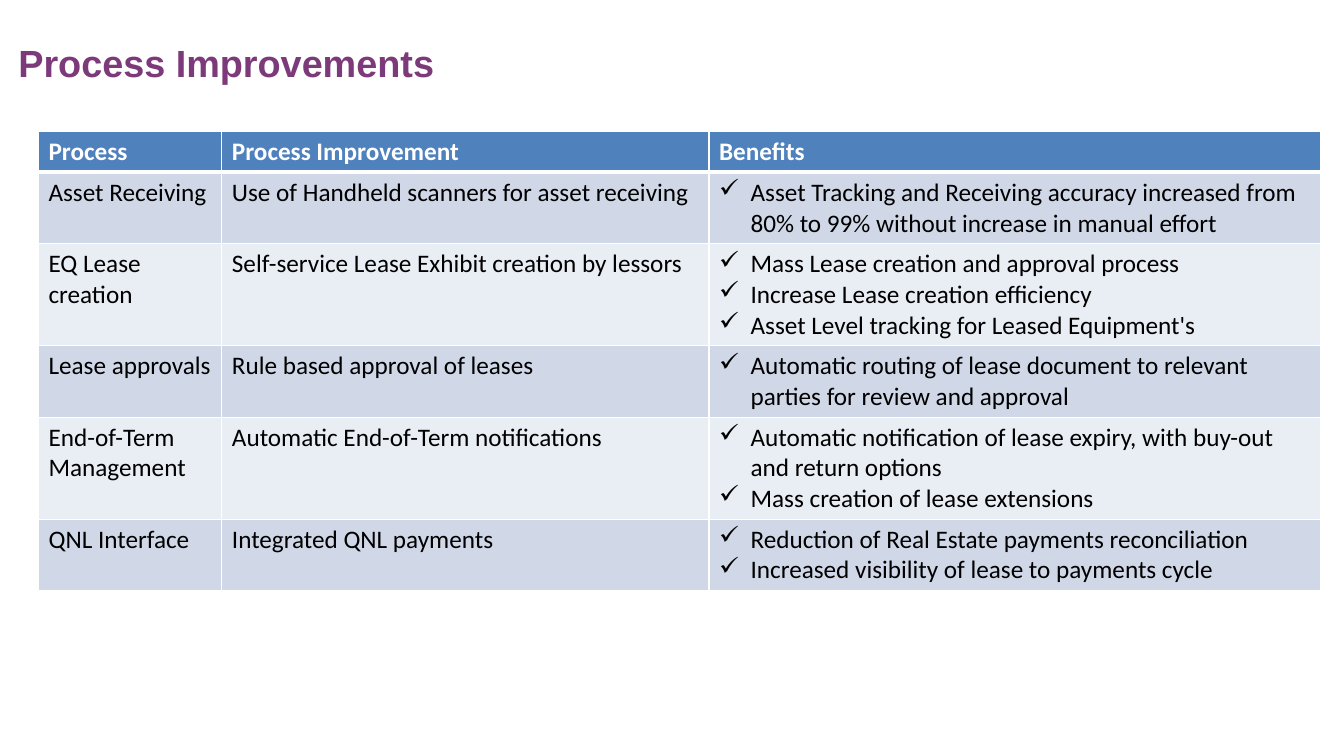
import pptx
import pptx.dml.color
import pptx.enum.text
import pptx.oxml
import pptx.oxml.ns
import pptx.util
from lxml import etree

Pt = pptx.util.Pt

COLORS = {
    "title": "7C3A7A",
    "header": "4F81BD",
    "odd": "D0D8E8",
    "even": "E9EDF4",
    "white": "FFFFFF",
    "black": "000000",
}

HEADINGS = ["Process", "Process Improvement", "Benefits"]
IMPROVEMENTS = [
    ("Asset Receiving", "Use of Handheld scanners for asset receiving",
     ["Asset Tracking and Receiving accuracy increased from 80% to 99% "
      "without increase in manual effort"]),
    ("EQ Lease creation", "Self-service Lease Exhibit creation by lessors",
     ["Mass Lease creation and approval process",
      "Increase Lease creation efficiency",
      "Asset Level tracking for Leased Equipment's"]),
    ("Lease approvals", "Rule based approval of leases",
     ["Automatic routing of lease document to relevant parties for review "
      "and approval"]),
    ("End-of-Term Management", "Automatic End-of-Term notifications",
     ["Automatic notification of lease expiry, with buy-out and return options",
      "Mass creation of lease extensions"]),
    ("QNL Interface", "Integrated QNL payments",
     ["Reduction of Real Estate payments reconciliation",
      "Increased visibility of lease to payments cycle"]),
]
ROW_LINES = [1, 2, 3, 2, 3, 2]
COLUMN_WIDTHS = [131, 348, 437]
LINE_HEIGHT = 21.9
CELL_PADDING = 7.2


class SlideBuilder:
    """Draws styled elements on the current slide."""

    def __init__(self, slide):
        self.slide = slide

    def color(self, name):
        return pptx.dml.color.RGBColor.from_string(COLORS[name])

    def style(self, paragraph, face, size, color, bold):
        font = paragraph.font
        font.name, font.size, font.bold = face, Pt(size), bold
        font.color.rgb = self.color(color)

    def title(self, wording, left, top, width, height):
        frame = self.slide.shapes.add_textbox(
            Pt(left), Pt(top), Pt(width), Pt(height)).text_frame
        frame.word_wrap = True
        frame.vertical_anchor = pptx.enum.text.MSO_ANCHOR.BOTTOM
        frame.text = wording
        self.style(frame.paragraphs[0], "Arial", 27, "title", True)

    def check_mark(self, paragraph):
        properties = paragraph._p.get_or_add_pPr()
        properties.set("marL", str(Pt(22.5)))
        properties.set("indent", str(-Pt(22.5)))
        bullet = etree.SubElement(properties, pptx.oxml.ns.qn("a:buChar"))
        bullet.set("char", "✓")

    def borders(self, cell, top, bottom):
        sides = {"L": 1, "R": 1, "T": top, "B": bottom}
        for position, (side, width) in enumerate(sides.items()):
            border = pptx.oxml.parse_xml(
                f'<a:ln{side} {pptx.oxml.ns.nsdecls("a")} w="{Pt(width)}">'
                f'<a:solidFill><a:srgbClr val="{COLORS["white"]}"/></a:solidFill>'
                f'</a:ln{side}>')
            cell._tc.get_or_add_tcPr().insert(position, border)

    def cell(self, cell, content, row):
        header = row == 0
        checked = isinstance(content, list)
        cell.fill.solid()
        cell.fill.fore_color.rgb = self.color(
            "header" if header else "odd" if row % 2 else "even")
        self.borders(cell, 3 if row == 1 else 1, 3 if header else 1)
        cell.text = "\n".join(content) if checked else content
        for paragraph in cell.text_frame.paragraphs:
            if checked:
                self.check_mark(paragraph)
            self.style(paragraph, "Calibri", 18,
                       "white" if header else "black", header)

    def table(self, rows, left, top):
        heights = [CELL_PADDING + LINE_HEIGHT * lines for lines in ROW_LINES]
        table = self.slide.shapes.add_table(
            len(rows), len(COLUMN_WIDTHS), Pt(left), Pt(top),
            Pt(sum(COLUMN_WIDTHS)), Pt(sum(heights))).table
        for column, width in zip(table.columns, COLUMN_WIDTHS):
            column.width = Pt(width)
        for row, (contents, height) in enumerate(zip(rows, heights)):
            table.rows[row].height = Pt(height)
            for column, content in enumerate(contents):
                self.cell(table.cell(row, column), content, row)


def main():
    presentation = pptx.Presentation()
    presentation.slide_width, presentation.slide_height = Pt(960), Pt(540)
    slide = presentation.slides.add_slide(presentation.slide_layouts[6])
    builder = SlideBuilder(slide)
    builder.title("Process Improvements", 6, 21.6, 699, 42.5)
    builder.table([HEADINGS, *IMPROVEMENTS], 27.5, 94)
    presentation.save("out.pptx")


if __name__ == "__main__":
    main()
